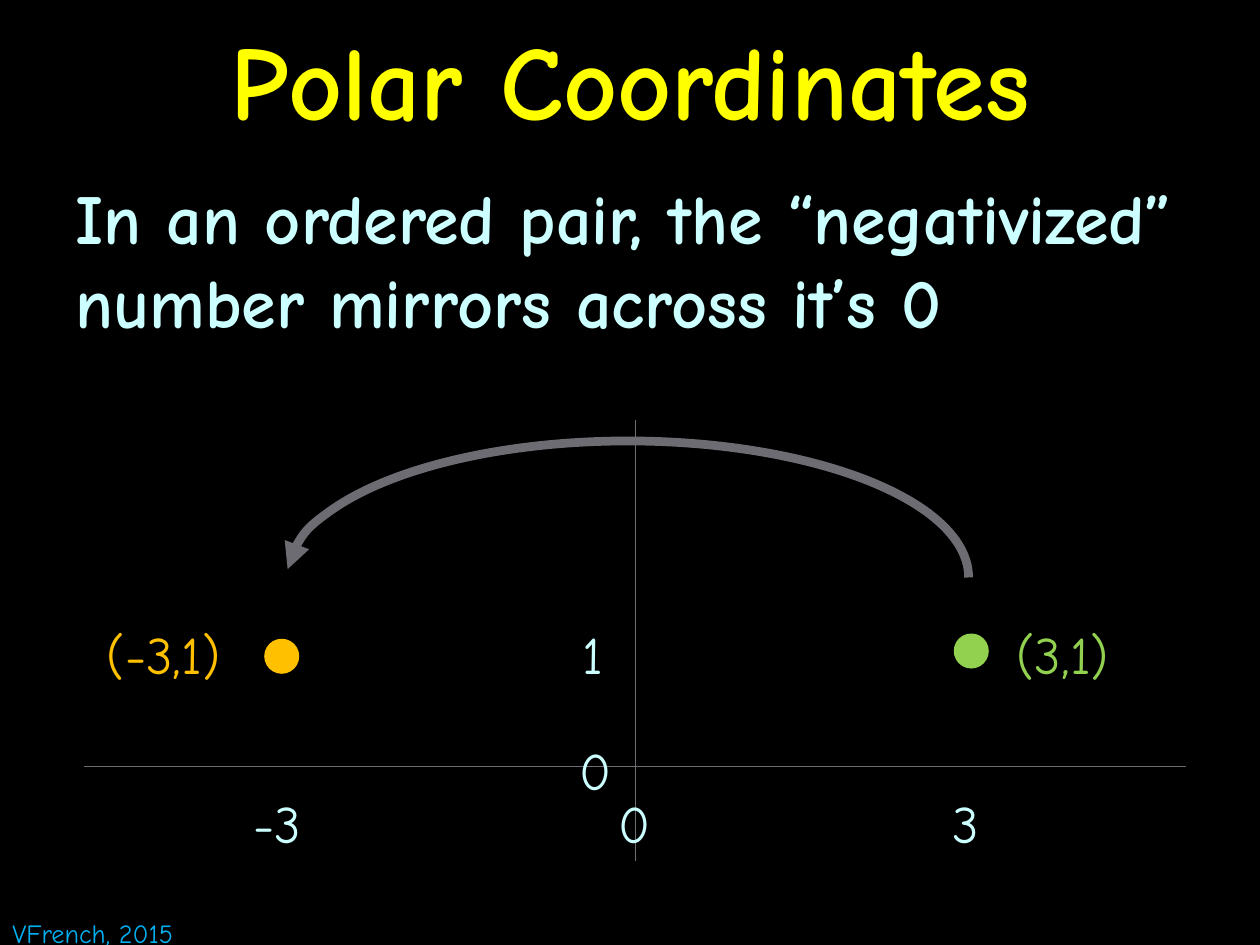
from lxml import etree
from pptx import Presentation
from pptx.dml.color import RGBColor
from pptx.enum.shapes import MSO_CONNECTOR, MSO_SHAPE
from pptx.enum.text import MSO_ANCHOR, MSO_AUTO_SIZE, PP_ALIGN
from pptx.oxml.ns import qn
from pptx.util import Pt

STRAIGHT = MSO_CONNECTOR.STRAIGHT
ARC, OVAL = MSO_SHAPE.ARC, MSO_SHAPE.OVAL
MIDDLE, CENTER = MSO_ANCHOR.MIDDLE, PP_ALIGN.CENTER
FIT, NO_FIT = MSO_AUTO_SIZE.SHAPE_TO_FIT_TEXT, MSO_AUTO_SIZE.NONE

BLACK = RGBColor(0x00, 0x00, 0x00)
YELLOW = RGBColor(0xFF, 0xFF, 0x00)
PALE = RGBColor(0xCC, 0xFF, 0xFF)
GRAY = RGBColor(0x6C, 0x6C, 0x72)
BLUE = RGBColor(0x00, 0xB0, 0xF0)
GREEN = RGBColor(0x92, 0xD0, 0x50)
ORANGE = RGBColor(0xFF, 0xC0, 0x00)
FONT = "Comic Neue"

TITLE = "Polar Coordinates"
BODY = "In an ordered pair, the “negativized” number mirrors across it’s 0"
FOOTER = "VFrench, 2015"

X_TICK_TOP, POINT_TOP, LABEL_H = 448.5, 352, 44
LABELS = [
    ("3", 537, X_TICK_TOP, 33, PALE),
    ("-3", 138, X_TICK_TOP, 45, PALE),
    ("0", 346.5, X_TICK_TOP, 33, PALE),
    ("0", 324, 418, 33, PALE),
    ("1", 326, POINT_TOP, 28, PALE),
    ("(3,1)", 574, POINT_TOP, 77, GREEN),
    ("(-3,1)", 54, POINT_TOP, 90, ORANGE),
]
AXES = [(363, 492, 363, 240), (48, 438, 678, 438)]
DOTS = [(546, 363, GREEN), (152, 366, ORANGE)]
DOT_SIZE = 18


def add_text(s, text, box, size, color, bold=False, wrap=False):
    sp = s.shapes.add_textbox(*map(Pt, box))
    tf = sp.text_frame
    tf.word_wrap = wrap
    tf.auto_size = NO_FIT if wrap else FIT
    p = tf.paragraphs[0]
    p.text = text
    p.font.name = FONT
    p.font.size = Pt(size)
    p.font.bold = bold
    p.font.color.rgb = color
    return tf


def add_axis(s, ends):
    sp = s.shapes.add_connector(STRAIGHT, *map(Pt, ends))
    sp.line.color.rgb = GRAY
    sp.line.width = Pt(0.75)
    etree.SubElement(sp._element.spPr, qn("a:effectLst"))


def add_outlined(s, kind, box, color, width):
    sp = s.shapes.add_shape(kind, *map(Pt, box))
    sp.shadow.inherit = False
    sp.line.color.rgb = color
    sp.line.width = Pt(width)
    return sp


def main():
    prs = Presentation()
    prs.slide_width, prs.slide_height = Pt(720), Pt(540)
    s = prs.slides.add_slide(prs.slide_layouts[6])
    s.background.fill.solid()
    s.background.fill.fore_color.rgb = BLACK

    for ends in AXES:
        add_axis(s, ends)

    tf = add_text(s, TITLE, (0, 0, 720, 90), 60, YELLOW, True, True)
    tf.vertical_anchor = MIDDLE
    tf.paragraphs[0].alignment = CENTER
    tf = add_text(s, BODY, (36, 96, 648, 444), 40, PALE, True, True)
    tf.paragraphs[0].space_before = Pt(8)

    arc = add_outlined(s, ARC, (164, 252, 389.5, 156), GRAY, 5)
    arc.fill.background()
    arc.adjustments[0] = 108.84
    arc.adjustments[1] = 0
    etree.SubElement(arc.line._get_or_add_ln(), qn("a:headEnd"), type="triangle")

    add_text(s, FOOTER, (0, 520.5, 117, 25), 15, BLUE)
    for text, left, top, width, color in LABELS:
        add_text(s, text, (left, top, width, LABEL_H), 30, color)

    for left, top, color in DOTS:
        dot = add_outlined(s, OVAL, (left, top, DOT_SIZE, DOT_SIZE), color, 2)
        dot.fill.solid()
        dot.fill.fore_color.rgb = color

    prs.save("out.pptx")


if __name__ == "__main__":
    main()
